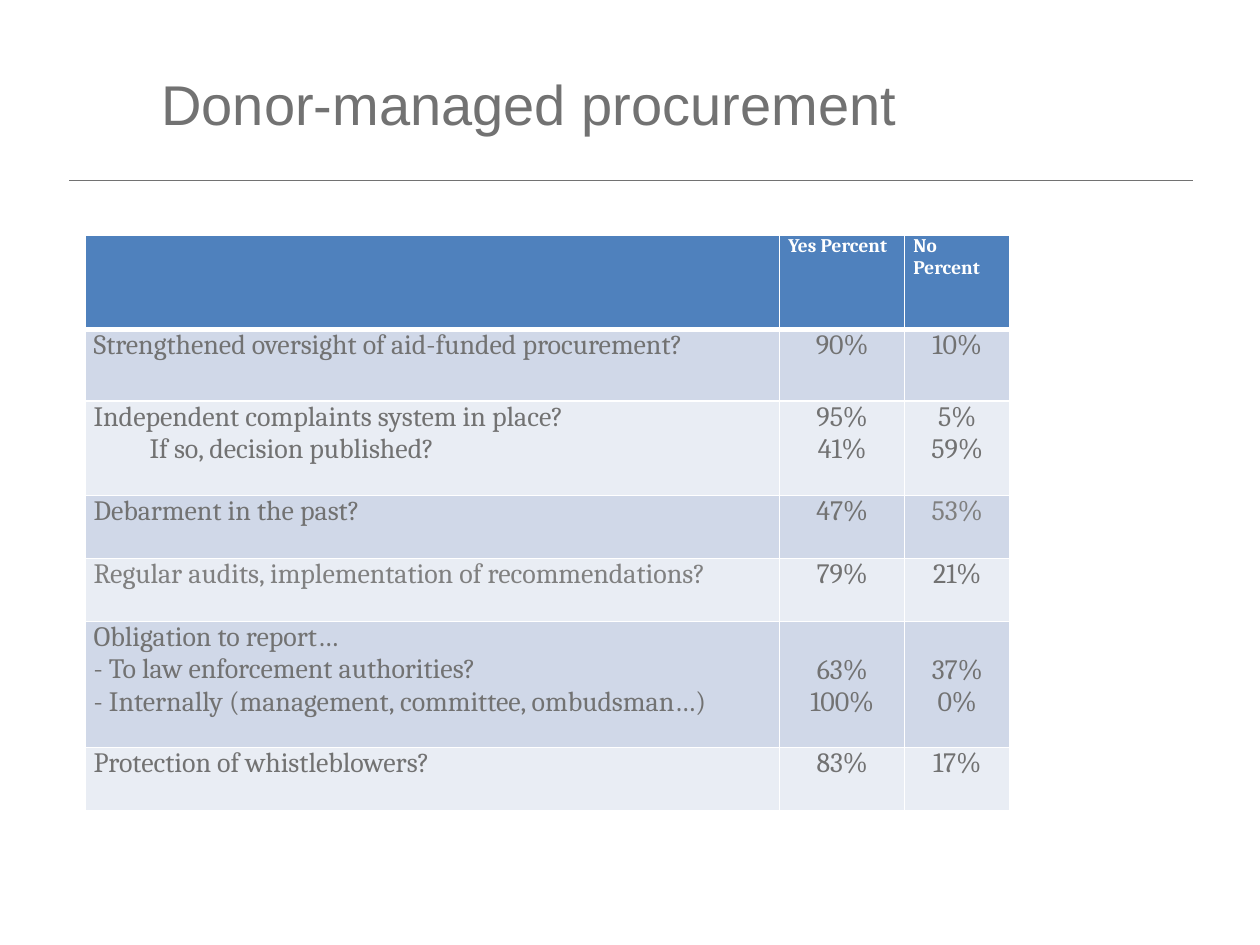
import pptx
import pptx.dml.color
import pptx.enum.shapes
import pptx.enum.text
import pptx.oxml.ns
import pptx.util
import lxml.etree
from dataclasses import dataclass


@dataclass
class Theme:
    title_font: str = "Arial"
    body_font: str = "Cambria"
    title_size: float = 32
    body_size: float = 16
    header_size: float = 11
    text: str = "727272"
    light_text: str = "808080"
    white: str = "FFFFFF"
    header: str = "4F81BD"
    bands: tuple = ("D0D8E8", "E9EDF4")


theme = Theme()
Pt = pptx.util.Pt
left = pptx.enum.text.PP_ALIGN.LEFT
center = pptx.enum.text.PP_ALIGN.CENTER


def write(para, text, font=theme.body_font, size=theme.body_size,
          color=theme.text, bold=False, align=left, indent=0):
    if indent:
        para._p.get_or_add_pPr().set("marL", str(Pt(indent)))
    para.alignment = align
    para.font.size = Pt(size)
    span = para.add_run()
    span.text = text
    span.font.name = font
    span.font.size = Pt(size)
    span.font.bold = bold
    span.font.color.rgb = pptx.dml.color.RGBColor.from_string(color)


def add_border(cell, side, width):
    properties = cell._tc.get_or_add_tcPr()
    line = lxml.etree.SubElement(properties, pptx.oxml.ns.qn(f"a:{side}"), w=str(Pt(width)))
    fill = lxml.etree.SubElement(line, pptx.oxml.ns.qn("a:solidFill"))
    lxml.etree.SubElement(fill, pptx.oxml.ns.qn("a:srgbClr"), val=theme.white)


deck = pptx.Presentation()
deck.slide_width = Pt(720)
deck.slide_height = Pt(540)
page = deck.slides.add_slide(deck.slide_layouts[5])

title = page.shapes.title
title.left, title.top, title.width, title.height = Pt(85), Pt(18.7), Pt(584), Pt(80.6)
title.text_frame.vertical_anchor = pptx.enum.text.MSO_ANCHOR.MIDDLE
write(title.text_frame.paragraphs[0], "Donor-managed procurement",
      font=theme.title_font, size=theme.title_size)

rule = page.shapes.add_connector(
    pptx.enum.shapes.MSO_CONNECTOR.STRAIGHT, Pt(39.6), Pt(103), Pt(681.8), Pt(103))
rule.line.color.rgb = pptx.dml.color.RGBColor.from_string(theme.text)
rule.line.width = Pt(0.5)
lxml.etree.SubElement(rule._element.spPr, pptx.oxml.ns.qn("a:effectLst"))

column_widths = [397, 71.5, 60]
row_heights = [54, 41, 54, 36, 36, 72, 36]
rows = [
    [[], ["Yes Percent"], ["No Percent"]],
    [["Strengthened oversight of aid-funded procurement?"], ["90%"], ["10%"]],
    [["Independent complaints system in place?", "If so, decision published?"],
     ["95%", "41%"], ["5%", "59%"]],
    [["Debarment in the past?"], ["47%"], ["53%"]],
    [["Regular audits, implementation of recommendations?"], ["79%"], ["21%"]],
    [["Obligation to report…", "- To law enforcement authorities?",
      "- Internally (management, committee, ombudsman…)"],
     ["63%", "100%"], ["37%", "0%"]],
    [["Protection of whistleblowers?"], ["83%"], ["17%"]],
]
light_cells = {(3, 2), (4, 0)}
indents = {"If so, decision published?": 32}
line_height = 18.5

table = page.shapes.add_table(
    len(rows), len(column_widths), Pt(48.5), Pt(134.2),
    Pt(sum(column_widths)), Pt(sum(row_heights))).table
table.horz_banding = False
for column, width in zip(table.columns, column_widths):
    column.width = Pt(width)

for row_index, row in enumerate(rows):
    table.rows[row_index].height = Pt(row_heights[row_index])
    is_header = row_index == 0
    for column_index, lines in enumerate(row):
        cell = table.cell(row_index, column_index)
        cell.margin_left = cell.margin_right = Pt(5)
        cell.margin_bottom = 0
        missing_lines = max(len(row[0]) - len(lines), 0)
        cell.margin_top = Pt(missing_lines * line_height)
        add_border(cell, "lnL", 1)
        add_border(cell, "lnR", 1)
        add_border(cell, "lnT", 3 if row_index == 1 else 1)
        add_border(cell, "lnB", 3 if is_header else 1)
        cell.fill.solid()
        fill = theme.header if is_header else theme.bands[(row_index - 1) % 2]
        cell.fill.fore_color.rgb = pptx.dml.color.RGBColor.from_string(fill)
        if is_header:
            color = theme.white
        elif (row_index, column_index) in light_cells:
            color = theme.light_text
        else:
            color = theme.text
        for line_index, text in enumerate(lines):
            frame = cell.text_frame
            para = frame.add_paragraph() if line_index else frame.paragraphs[0]
            write(para, text, color=color, bold=is_header,
                  size=theme.header_size if is_header else theme.body_size,
                  align=center if column_index and not is_header else left,
                  indent=indents.get(text, 0))

deck.save("out.pptx")
